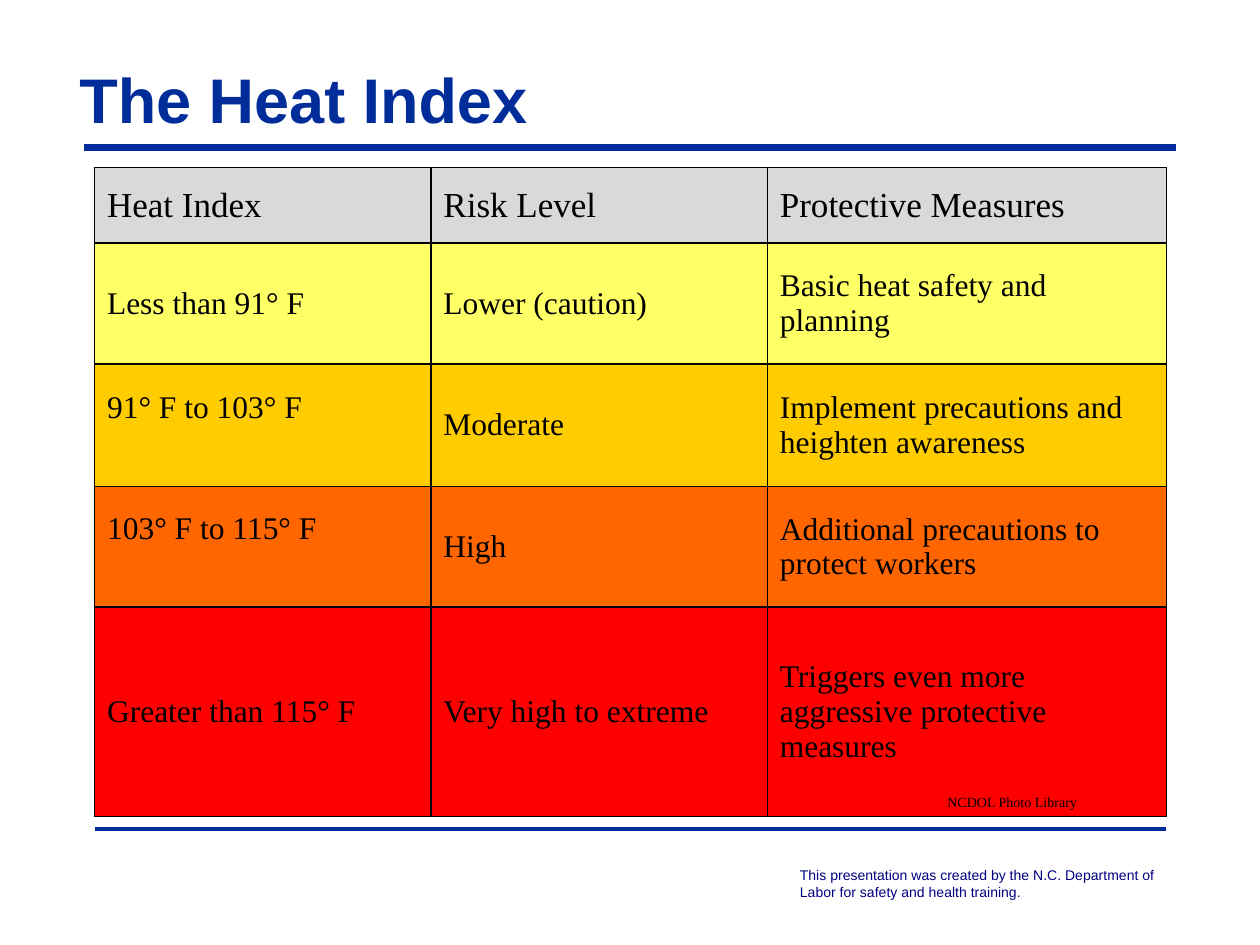
from lxml import etree
from pptx import Presentation
from pptx.dml.color import RGBColor
from pptx.enum.shapes import MSO_CONNECTOR
from pptx.enum.text import MSO_ANCHOR
from pptx.oxml.ns import qn
from pptx.util import Inches, Pt

NAVY = "012D9A"
BLACK = "000000"


def color(value):
    return RGBColor.from_string(value)


def add_text(paragraph, text, size, font, hue, bold=False):
    run = paragraph.add_run()
    run.text = text
    run.font.size = Pt(size)
    run.font.name = font
    run.font.bold = bold
    run.font.color.rgb = color(hue)


prs = Presentation()
prs.slide_width, prs.slide_height = Inches(10), Inches(7.5)
slide = prs.slides.add_slide(prs.slide_layouts[6])

# Rules under the title and above the footer
for left, right, y, weight in [(0.67, 9.33, 1.17, 4), (0.75, 9.25, 6.58, 2)]:
    rule = slide.shapes.add_connector(
        MSO_CONNECTOR.STRAIGHT, Inches(left), Inches(y), Inches(right), Inches(y))
    rule.line.color.rgb = color(NAVY)
    rule.line.width = Pt(weight)
    etree.SubElement(rule._element.spPr, qn("a:effectLst"))

# Footer
footer = slide.shapes.add_textbox(Inches(6.25), Inches(6.83), Inches(3.25), Inches(0.37)).text_frame
footer.word_wrap = True
add_text(footer.paragraphs[0],
         "This presentation was created by the N.C. Department of Labor for safety and health training.",
         8, "Arial", "000080")

# Title
title = slide.shapes.add_textbox(Inches(0.58), Inches(0.48), Inches(9.08), Inches(0.6)).text_frame
title.word_wrap = True
title.margin_left = title.margin_right = Inches(0.05)
title.margin_top = title.margin_bottom = 0
add_text(title.paragraphs[0], "The Heat Index", 36, "Arial", NAVY, bold=True)

# Heat index table: height, fill, texts
levels = [
    (0.6, "D9D9D9", ["Heat Index", "Risk Level", "Protective Measures"]),
    (0.96, "FFFF66", ["Less than 91° F", "Lower (caution)", "Basic heat safety and planning"]),
    (0.97, "FFCC00", ["91° F to 103° F", "Moderate",
                      "Implement precautions and heighten awareness"]),
    (0.96, "FF6600", ["103° F to 115° F", "High",
                      "Additional precautions to\nprotect workers"]),
    (1.66, "FF0000", ["Greater than 115° F", "Very high to extreme",
                      "Triggers even more aggressive protective\nmeasures"]),
]
heat_table = slide.shapes.add_table(
    len(levels), 3, Inches(0.75), Inches(1.33), Inches(8.5), Inches(5.15)).table
for column, width in zip(heat_table.columns, [2.67, 2.67, 3.17]):
    column.width = Inches(width)

for r, (height, fill, texts) in enumerate(levels):
    heat_table.rows[r].height = Inches(height)
    for c, text in enumerate(texts):
        cell = heat_table.cell(r, c)
        cell.vertical_anchor = MSO_ANCHOR.MIDDLE
        # The two temperature ranges sit half a line above the middle
        if c == 0 and r in (2, 3):
            cell.margin_bottom = Inches(0.33)
        for i, line in enumerate(text.split("\n")):
            frame = cell.text_frame
            paragraph = frame.add_paragraph() if i else frame.paragraphs[0]
            add_text(paragraph, line, 18 if r else 20, "Times New Roman", BLACK)
        # Borders come before the fill in the cell properties
        properties = cell._tc.get_or_add_tcPr()
        for side in ("a:lnL", "a:lnR", "a:lnT", "a:lnB"):
            border = etree.SubElement(properties, qn(side), w=str(Pt(1)))
            solid = etree.SubElement(border, qn("a:solidFill"))
            etree.SubElement(solid, qn("a:srgbClr"), val=BLACK)
        cell.fill.solid()
        cell.fill.fore_color.rgb = color(fill)

# Credit
credit = slide.shapes.add_textbox(Inches(7.42), Inches(6.25), Inches(1.3), Inches(0.24)).text_frame
credit.word_wrap = False
add_text(credit.paragraphs[0], "NCDOL Photo Library", 8, "Times New Roman", BLACK)

prs.save("out.pptx")
